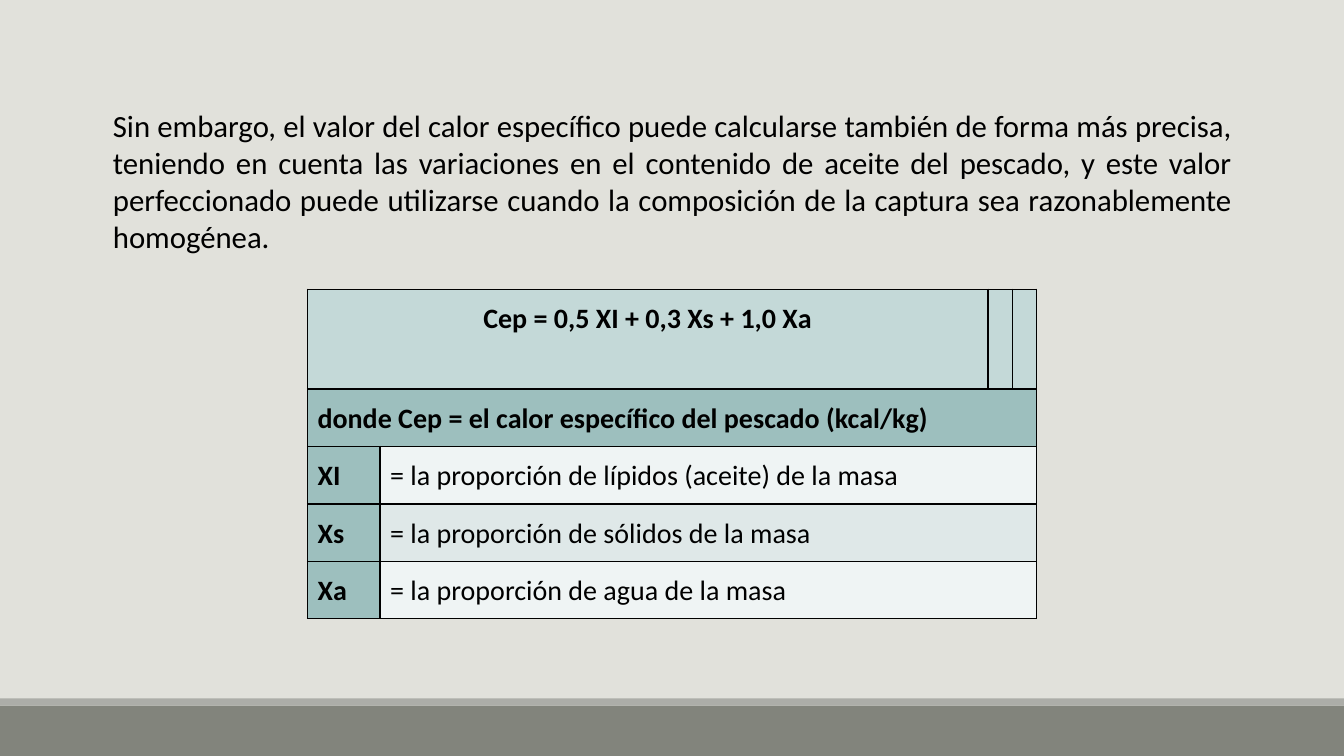
from dataclasses import dataclass

from lxml import etree
from pptx import Presentation
from pptx import util as u
from pptx.dml.color import RGBColor
from pptx.enum import shapes, text
from pptx.oxml import ns


@dataclass(frozen=True)
class Theme:
    font: str = "Calibri"
    ink: str = "000000"
    background: str = "E1E1DB"
    footer: str = "82847C"
    footer_edge: str = "ACADA8"
    formula: str = "C4D9D8"
    label: str = "9DBFBE"
    light: str = "EFF4F4"
    shaded: str = "DFE8E8"
    body_size: int = 22
    table_size: int = 20
    border_width: int = 1


@dataclass(frozen=True)
class Band:
    top: float
    height: float
    color: str


@dataclass(frozen=True)
class Entry:
    row: int
    column: int
    span: int
    fill: str
    words: str = ""
    bold: bool = True
    align: text.PP_ALIGN = text.PP_ALIGN.LEFT


THEME = Theme()
WIDTH, HEIGHT = 13.33, 7.5
COLUMNS = (0.72, 6.03, 0.24, 0.23)
ROWS = (0.99,) + (0.57,) * 4
BANDS = (Band(7, 0.5, THEME.footer), Band(6.93, 0.07, THEME.footer_edge))
INTRO = (
    "Sin embargo, el valor del calor específico puede calcularse también de forma más "
    "precisa, teniendo en cuenta las variaciones en el contenido de aceite del pescado, "
    "y este valor perfeccionado puede utilizarse cuando la composición de la captura sea "
    "razonablemente homogénea."
)
HEADINGS = [
    Entry(0, 0, 2, THEME.formula, "Cep = 0,5 XI + 0,3 Xs + 1,0 Xa", align=text.PP_ALIGN.CENTER),
    Entry(0, 2, 1, THEME.formula),
    Entry(0, 3, 1, THEME.formula),
    Entry(1, 0, 4, THEME.label, "donde Cep = el calor específico del pescado (kcal/kg)"),
]
TERMS = (
    ("XI", "= la proporción de lípidos (aceite) de la masa"),
    ("Xs", "= la proporción de sólidos de la masa"),
    ("Xa", "= la proporción de agua de la masa"),
)


def write(frame, words: str, *, size: int, bold: bool = False,
          align: text.PP_ALIGN = text.PP_ALIGN.LEFT, spacing: float = 1.0) -> None:
    para = frame.paragraphs[0]
    para.alignment = align
    para.line_spacing = spacing
    span = para.add_run()
    span.text = words
    span.font.name = THEME.font
    span.font.size = u.Pt(size)
    span.font.bold = bold
    span.font.color.rgb = RGBColor.from_string(THEME.ink)


def draw_band(page, band: Band) -> None:
    box = page.shapes.add_shape(
        shapes.MSO_SHAPE.RECTANGLE, 0, u.Inches(band.top), u.Inches(WIDTH), u.Inches(band.height))
    box.shadow.inherit = False
    box.fill.solid()
    box.fill.fore_color.rgb = RGBColor.from_string(band.color)
    box.line.fill.background()


def draw_intro(page) -> None:
    box = page.shapes.add_textbox(u.Inches(1.12), u.Inches(1.01), u.Inches(11.1), u.Inches(1.65))
    frame = box.text_frame
    frame.word_wrap = True
    frame.margin_left = frame.margin_right = 0
    write(frame, INTRO, size=THEME.body_size, align=text.PP_ALIGN.JUSTIFY)


def add_borders(cell) -> None:
    properties = cell._tc.get_or_add_tcPr()
    for position, side in enumerate(("lnL", "lnR", "lnT", "lnB")):
        line = etree.Element(ns.qn(f"a:{side}"), w=str(u.Pt(THEME.border_width)))
        fill = etree.SubElement(line, ns.qn("a:solidFill"))
        etree.SubElement(fill, ns.qn("a:srgbClr"), val=THEME.ink)
        properties.insert(position, line)


def draw_entry(table, entry: Entry) -> None:
    cell = table.cell(entry.row, entry.column)
    if entry.span > 1:
        cell.merge(table.cell(entry.row, entry.column + entry.span - 1))
    for column in range(entry.column, entry.column + entry.span):
        part = table.cell(entry.row, column)
        part.fill.solid()
        part.fill.fore_color.rgb = RGBColor.from_string(entry.fill)
        add_borders(part)
    cell.margin_left = cell.margin_right = u.Inches(0.1)
    cell.margin_top = cell.margin_bottom = u.Inches(0.1)
    if entry.words:
        write(cell.text_frame, entry.words, size=THEME.table_size, bold=entry.bold,
              align=entry.align, spacing=1.07)


def draw_table(page) -> None:
    table = page.shapes.add_table(
        len(ROWS), len(COLUMNS), u.Inches(3.05), u.Inches(2.87),
        u.Inches(sum(COLUMNS)), u.Inches(sum(ROWS))).table
    table.first_row = table.horz_banding = False
    for column, width in zip(table.columns, COLUMNS):
        column.width = u.Inches(width)
    for row, height in zip(table.rows, ROWS):
        row.height = u.Inches(height)
    entries = list(HEADINGS)
    for row, (symbol, meaning) in enumerate(TERMS, start=2):
        fill = THEME.shaded if row % 2 else THEME.light
        entries += [Entry(row, 0, 1, THEME.label, symbol),
                    Entry(row, 1, 3, fill, meaning, bold=False)]
    for entry in entries:
        draw_entry(table, entry)


def main() -> None:
    deck = Presentation()
    deck.slide_width, deck.slide_height = u.Inches(WIDTH), u.Inches(HEIGHT)
    page = deck.slides.add_slide(deck.slide_layouts.get_by_name("Blank"))
    page.background.fill.solid()
    page.background.fill.fore_color.rgb = RGBColor.from_string(THEME.background)
    for band in BANDS:
        draw_band(page, band)
    draw_intro(page)
    draw_table(page)
    deck.save("out.pptx")


if __name__ == "__main__":
    main()
